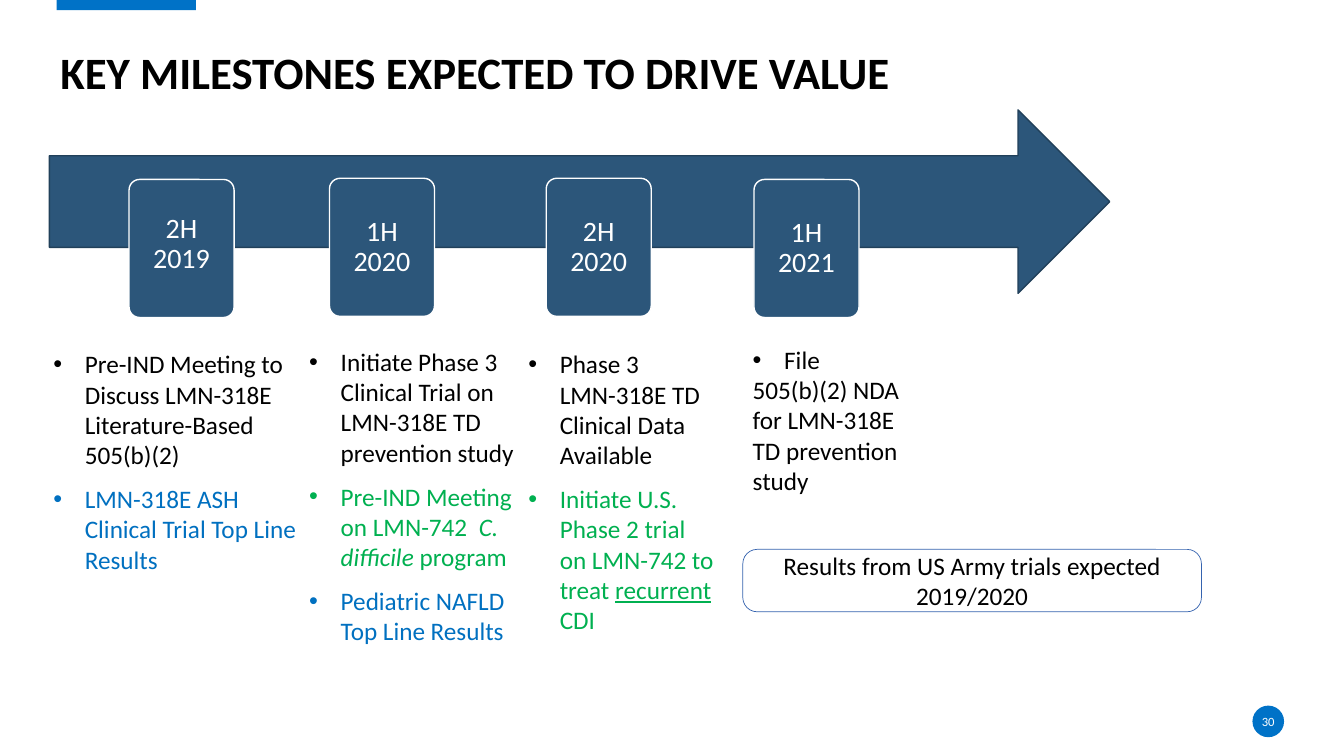
from pptx import Presentation
from pptx.dml.color import RGBColor
from pptx.enum.shapes import MSO_SHAPE
from pptx.enum.text import MSO_ANCHOR, PP_ALIGN
from pptx.oxml.ns import qn
from pptx.util import Pt
from lxml.etree import SubElement

FONT = "Calibri"
BLACK, WHITE, NAVY = "000000", "FFFFFF", "2C567A"
ACCENT, BLUE, GREEN = "0072C7", "0070C0", "00B050"
INDENT = 22.5

MILESTONES = [
    ("2H 2019", 92.2, 128.2, 13.8),
    ("1H 2020", 235.4, 127.4, 8),
    ("2H 2020", 390.2, 127.4, 8),
    ("1H 2021", 538.6, 128.2, 8),
]

COLUMNS = [
    ((31, 245.5, 189.4, 179.3), [
        (BLACK, True, [("Pre-IND Meeting to Discuss LMN-318E Literature-Based 505(b)(2)", {})]),
        (BLUE, True, [("LMN-318E ASH Clinical Trial Top Line Results", {})]),
    ]),
    ((213.8, 243.8, 167, 223.2), [
        (BLACK, True, [("Initiate Phase 3 Clinical Trial on LMN-318E TD prevention study", {})]),
        (GREEN, True, [("Pre-IND Meeting on LMN-742  ", {}),
                       ("C. difficile ", {"italic": True}),
                       ("program", {})]),
        (BLUE, True, [("Pediatric NAFLD Top Line Results", {})]),
    ]),
    ((370.3, 245.5, 149, 213.1), [
        (BLACK, True, [("Phase 3 LMN-318E TD Clinical Data Available", {})]),
        (GREEN, True, [("Initiate U.S. Phase 2 trial on LMN-742 to treat ", {}),
                       ("recurrent", {"underline": True}),
                       (" CDI", {})]),
    ]),
    ((530.6, 242.4, 126.7, 116.6), [
        (BLACK, True, [("File", {})]),
        (BLACK, False, [("505(b)(2) NDA for LMN-318E TD prevention study", {})]),
    ]),
]


def color(value):
    """Return the colour of a hex string."""
    return RGBColor.from_string(value)


def apply(target, values):
    """Set each named attribute on the target."""
    for name, value in values.items():
        setattr(target, name, value)


def set_frame(frame, anchor, insets):
    """Wrap the text and set its anchor and left, top, right, bottom insets."""
    left, top, right, bottom = map(Pt, insets)
    apply(frame, {"word_wrap": True, "vertical_anchor": anchor,
                  "margin_left": left, "margin_top": top,
                  "margin_right": right, "margin_bottom": bottom})


def add_span(para, text, size, fill, **style):
    """Add a run of text to a paragraph."""
    span = para.add_run()
    span.text = text
    apply(span.font, {"name": FONT, "size": Pt(size), **style})
    span.font.color.rgb = color(fill)


def add_bullet(para):
    """Give a paragraph a hanging round bullet."""
    properties = para._p.get_or_add_pPr()
    properties.set("marL", str(Pt(INDENT)))
    properties.set("indent", str(Pt(-INDENT)))
    SubElement(properties, qn("a:buFont"), typeface="Arial")
    SubElement(properties, qn("a:buChar"), char="•")


def add_figure(page, kind, place, fill, line=None, weight=1, corner=None):
    """Add a filled preset shape."""
    shape = page.shapes.add_shape(kind, *map(Pt, place))
    shape.shadow.inherit = False
    shape.fill.solid()
    shape.fill.fore_color.rgb = color(fill)
    if line:
        shape.line.color.rgb = color(line)
        shape.line.width = Pt(weight)
    else:
        shape.line.fill.background()
    if corner is not None:
        shape.adjustments[0] = corner
    return shape


def add_label(shape, text, size, fill, insets, spacing=1.0):
    """Write centred text inside a shape."""
    set_frame(shape.text_frame, MSO_ANCHOR.MIDDLE, insets)
    para = shape.text_frame.paragraphs[0]
    apply(para, {"alignment": PP_ALIGN.CENTER, "line_spacing": spacing})
    add_span(para, text, size, fill)


def add_title(page, text):
    """Add the slide heading."""
    box = page.shapes.add_textbox(Pt(43.2), Pt(23), Pt(691.2), Pt(56.9))
    set_frame(box.text_frame, MSO_ANCHOR.MIDDLE, (0, 0, 0, 0))
    add_span(box.text_frame.paragraphs[0], text, 32, BLACK, bold=True)


def add_milestone(page, text, left, top, bottom_inset):
    """Add a dated card on the timeline."""
    card = add_figure(page, MSO_SHAPE.ROUNDED_RECTANGLE, (left, top, 75, 98.6),
                      NAVY, WHITE, corner=0.1)
    add_label(card, text, 20, WHITE, (8, 8, 8, bottom_inset), 0.9)


def add_column(page, place, items):
    """Add the list of events below a milestone."""
    box = page.shapes.add_textbox(*map(Pt, place))
    set_frame(box.text_frame, MSO_ANCHOR.TOP, (7.2, 3.6, 7.2, 3.6))
    for index, (fill, bulleted, spans) in enumerate(items):
        para = box.text_frame.add_paragraph() if index else box.text_frame.paragraphs[0]
        if index and bulleted:
            para.space_before = Pt(9.8)
        if bulleted:
            add_bullet(para)
        for text, style in spans:
            add_span(para, text, 18, fill, **style)


def main():
    """Build the milestones slide."""
    deck = Presentation()
    apply(deck, {"slide_width": Pt(960), "slide_height": Pt(540)})
    page = deck.slides.add_slide(deck.slide_layouts[6])

    add_figure(page, MSO_SHAPE.RECTANGLE, (40.5, 0, 99.5, 7.2), ACCENT)
    badge = add_figure(page, MSO_SHAPE.OVAL, (894.6, 504, 22.6, 22.6), ACCENT)
    add_label(badge, "30", 9, WHITE, (0, 0, 0, 0))
    add_title(page, "KEY MILESTONES EXPECTED TO DRIVE VALUE")

    callout = add_figure(page, MSO_SHAPE.ROUNDED_RECTANGLE, (530.6, 392.4, 327.6, 44.6),
                         WHITE, "3563AF", 0.5, 0.23)
    add_label(callout, "Results from US Army trials expected 2019/2020", 18, BLACK,
              (7.2, 3.6, 7.2, 3.6))

    add_figure(page, MSO_SHAPE.RIGHT_ARROW, (35.3, 78.5, 757.4, 131), NAVY, "21405A")
    for milestone in MILESTONES:
        add_milestone(page, *milestone)
    for place, items in COLUMNS:
        add_column(page, place, items)

    deck.save("out.pptx")


if __name__ == "__main__":
    main()
